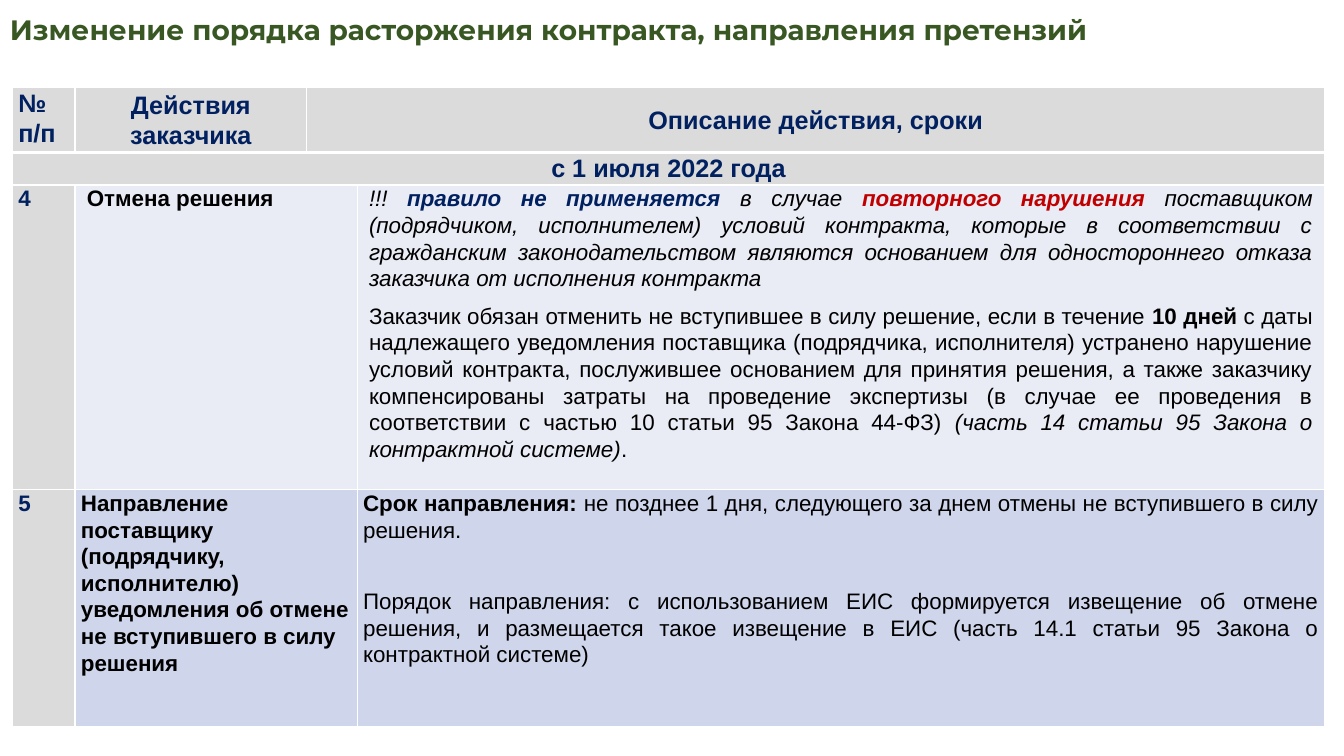
from dataclasses import dataclass

from lxml import etree
from pptx import Presentation
from pptx.dml.color import RGBColor
from pptx.enum.text import MSO_ANCHOR, MSO_AUTO_SIZE, PP_ALIGN
from pptx.oxml.ns import qn
from pptx.util import Cm, Pt

LEFT, CENTER, JUSTIFY = PP_ALIGN.LEFT, PP_ALIGN.CENTER, PP_ALIGN.JUSTIFY
TOP, MIDDLE = MSO_ANCHOR.TOP, MSO_ANCHOR.MIDDLE
GROW = MSO_AUTO_SIZE.SHAPE_TO_FIT_TEXT


@dataclass(frozen=True)
class Theme:
    title_font: str = "Montserrat"
    body_font: str = "Arial"
    title_size: int = 20
    header_size: int = 18
    body_size: int = 16
    green: str = "385723"
    navy: str = "002060"
    red: str = "C00000"
    black: str = "000000"
    white: str = "FFFFFF"
    grey: str = "DBDBDB"
    light_band: str = "E9EBF5"
    dark_band: str = "CFD5EA"
    thin_border: int = 1
    thick_border: int = 3
    line_spacing: float = 1.07


THEME = Theme()

TITLE = "Изменение порядка расторжения контракта, направления претензий"

# A run is (text, bold, italic, colour).
EXCEPTION = [
    ("!!! ", False, True, THEME.black),
    ("правило не применяется", True, True, THEME.navy),
    (" в случае ", False, True, THEME.black),
    ("повторного нарушения", True, True, THEME.red),
    (" поставщиком (подрядчиком, исполнителем) условий контракта, которые в "
     "соответствии с гражданским законодательством являются основанием для "
     "одностороннего отказа заказчика от исполнения контракта",
     False, True, THEME.black),
]
CANCELLATION = [
    ("Заказчик обязан отменить не вступившее в силу решение, если в течение ",
     False, False, THEME.black),
    ("10 дней", True, False, THEME.black),
    (" с даты надлежащего уведомления поставщика (подрядчика, исполнителя) "
     "устранено нарушение условий контракта, послужившее основанием для "
     "принятия решения, а также заказчику компенсированы затраты на проведение "
     "экспертизы (в случае ее проведения в соответствии с частью 10 статьи 95 "
     "Закона 44-ФЗ) ", False, False, THEME.black),
    ("(часть 14 статьи 95 Закона о контрактной системе)",
     False, True, THEME.black),
    (".", False, False, THEME.black),
]
DEADLINE = [
    ("Срок направления: ", True, False, THEME.black),
    ("не позднее 1 дня, следующего за днем отмены не вступившего в силу решения.",
     False, False, THEME.black),
]
PROCEDURE = [
    ("Порядок направления: с использованием ЕИС формируется извещение об отмене "
     "решения, и размещается такое извещение в ЕИС (часть 14.1 статьи 95 Закона "
     "о контрактной системе)", False, False, THEME.black),
]


def bold_text(text, color):
    return [[(text, True, False, color)]]


HEADER = dict(size=THEME.header_size, fill=THEME.grey, align=CENTER)
NUMBER = dict(fill=THEME.grey)
LIGHT = dict(fill=THEME.light_band, inset=0.3)
DARK = dict(fill=THEME.dark_band)

# (row, column, columns spanned, paragraphs, formatting)
CELLS = [
    (0, 0, 1, bold_text("№ п/п", THEME.navy), HEADER | dict(align=LEFT)),
    (0, 1, 1, bold_text("Действия заказчика", THEME.navy),
     HEADER | dict(anchor=MIDDLE)),
    (0, 2, 2, bold_text("Описание действия, сроки", THEME.navy),
     HEADER | dict(anchor=MIDDLE)),
    (1, 0, 4, bold_text("с 1 июля 2022 года", THEME.navy), HEADER),
    (2, 0, 1, bold_text("4", THEME.navy), NUMBER),
    (2, 1, 2, bold_text("Отмена решения", THEME.black), LIGHT),
    (2, 3, 1, [EXCEPTION, CANCELLATION], LIGHT | dict(align=JUSTIFY, gap=8)),
    (3, 0, 1, bold_text("5", THEME.navy), NUMBER),
    (3, 1, 2, bold_text("Направление поставщику (подрядчику, исполнителю) "
                        "уведомления об отмене не вступившего в силу решения",
                        THEME.black), DARK),
    (3, 3, 1, [DEADLINE, PROCEDURE], DARK | dict(align=JUSTIFY, gap=32)),
]
TABLE_LEFT, TABLE_TOP = 0.31, 2.21
COLUMN_WIDTHS = [1.58, 5.84, 1.27, 24.38]
ROW_HEIGHTS = [1.6, 0.82, 7.68, 5.97]


def style_font(font, name, size, bold, color):
    font.name, font.size, font.bold = name, Pt(size), bold
    font.color.rgb = RGBColor.from_string(color)


def set_borders(cell, row):
    """Draw white borders, thick on the edge below the header row."""
    properties = cell._tc.get_or_add_tcPr()
    thick_side = {0: "lnB", 1: "lnT"}.get(row)
    for position, side in enumerate(("lnL", "lnR", "lnT", "lnB")):
        width = THEME.thick_border if side == thick_side else THEME.thin_border
        line = etree.Element(qn(f"a:{side}"), w=str(Pt(width)))
        fill = etree.SubElement(line, qn("a:solidFill"))
        etree.SubElement(fill, qn("a:srgbClr"), val=THEME.white)
        properties.insert(position, line)


def fill_cell(cell, paragraphs, fill, size=THEME.body_size, align=LEFT,
              anchor=TOP, inset=0.15, gap=0):
    cell.fill.solid()
    cell.fill.fore_color.rgb = RGBColor.from_string(fill)
    cell.vertical_anchor = anchor
    cell.margin_left = cell.margin_right = Cm(inset)
    cell.margin_top = cell.margin_bottom = 0
    frame = cell.text_frame
    for index, runs in enumerate(paragraphs):
        paragraph = frame.add_paragraph() if index else frame.paragraphs[0]
        paragraph.alignment = align
        paragraph.line_spacing = THEME.line_spacing
        if index:
            paragraph.space_before = Pt(gap)
        for text, bold, italic, color in runs:
            run = paragraph.add_run()
            run.text = text
            style_font(run.font, THEME.body_font, size, bold, color)
            run.font.italic = italic


def add_title(slide):
    box = slide.shapes.add_textbox(0, Cm(0.2), Cm(33.45), Cm(1.11))
    frame = box.text_frame
    frame.word_wrap = True
    frame.auto_size = GROW
    paragraph = frame.paragraphs[0]
    paragraph.text = TITLE
    style_font(paragraph.font, THEME.title_font, THEME.title_size, True,
               THEME.green)


def add_actions_table(slide):
    table = slide.shapes.add_table(
        len(ROW_HEIGHTS), len(COLUMN_WIDTHS), Cm(TABLE_LEFT), Cm(TABLE_TOP),
        Cm(sum(COLUMN_WIDTHS)), Cm(sum(ROW_HEIGHTS))).table
    table.first_row = table.horz_banding = False
    for column, width in zip(table.columns, COLUMN_WIDTHS):
        column.width = Cm(width)
    for index, (row, height) in enumerate(zip(table.rows, ROW_HEIGHTS)):
        row.height = Cm(height)
        for cell in row.cells:
            set_borders(cell, index)
    for row, column, span, paragraphs, formatting in CELLS:
        cell = table.cell(row, column)
        if span > 1:
            cell.merge(table.cell(row, column + span - 1))
        fill_cell(cell, paragraphs, **formatting)


def main():
    presentation = Presentation()
    presentation.slide_width, presentation.slide_height = Cm(33.87), Cm(19.05)
    slide = presentation.slides.add_slide(presentation.slide_layouts[6])
    add_title(slide)
    add_actions_table(slide)
    presentation.save("out.pptx")


if __name__ == "__main__":
    main()
